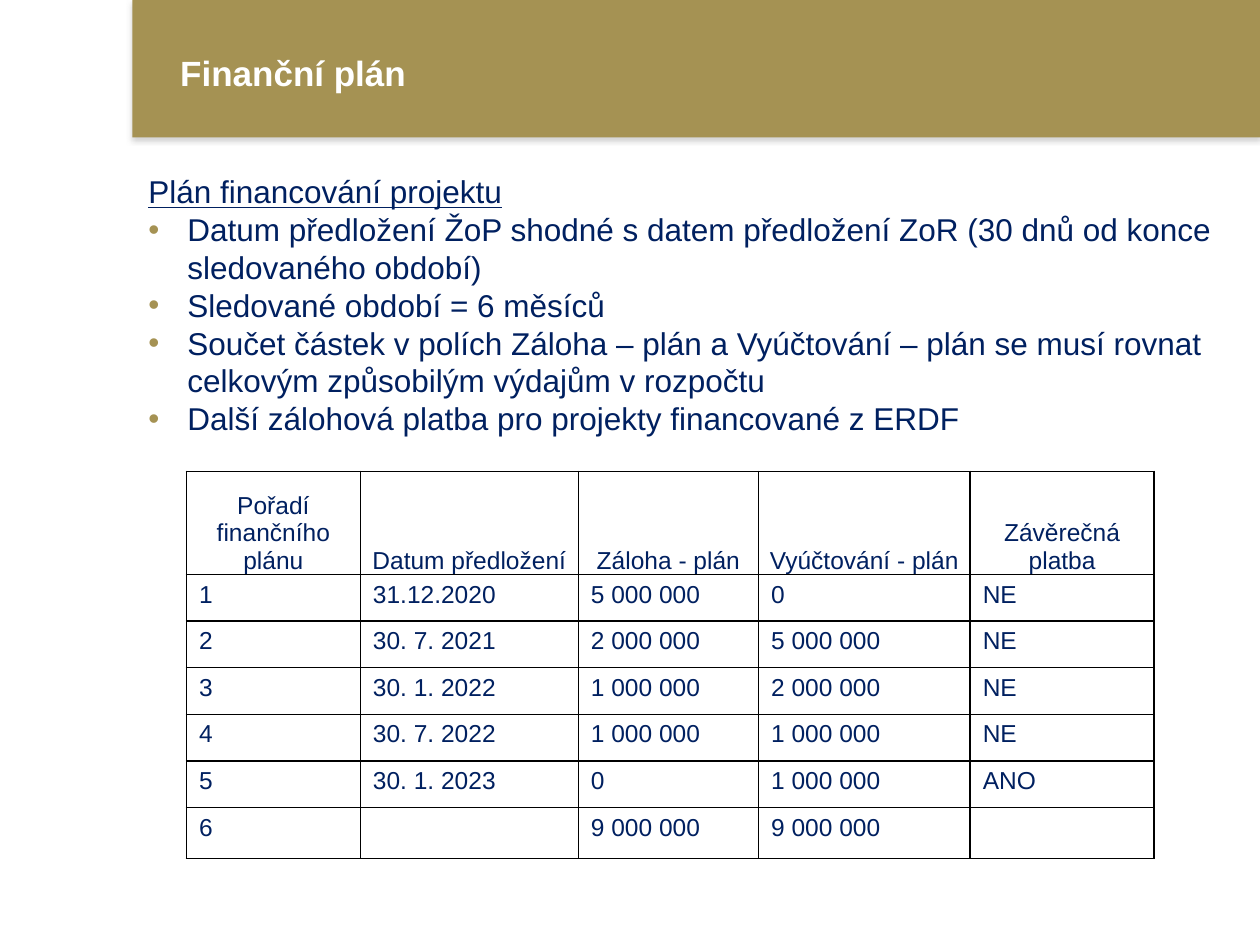
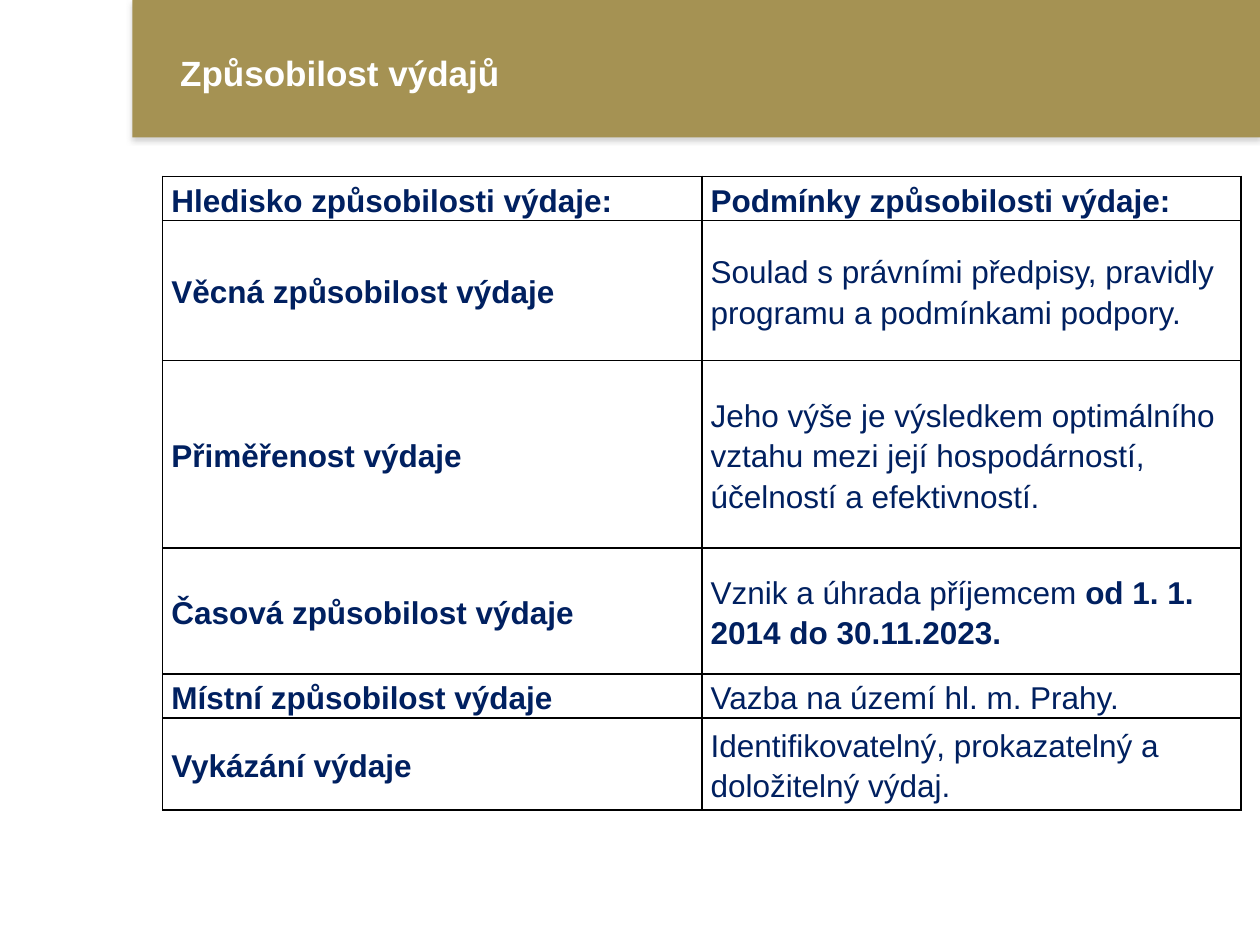
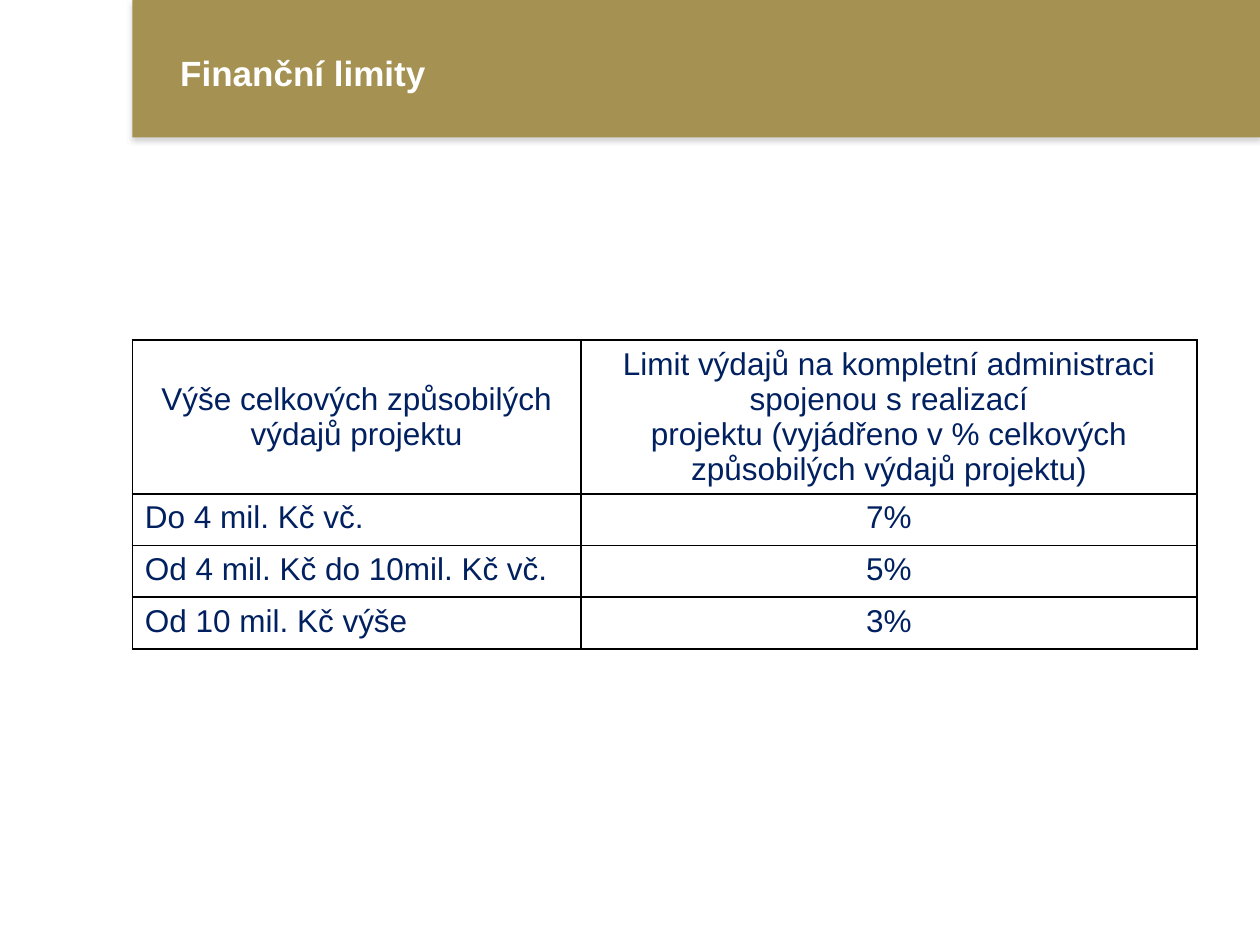
from dataclasses import dataclass
from typing import Any, NamedTuple

from lxml.etree import SubElement
from pptx import Presentation
from pptx.dml.color import RGBColor
from pptx.enum.shapes import MSO_SHAPE
from pptx.enum.text import MSO_ANCHOR, MSO_AUTO_SIZE, PP_ALIGN
from pptx.oxml.ns import qn
from pptx.util import Inches, Pt

RECT = MSO_SHAPE.RECTANGLE
TOP, MID, LOW = MSO_ANCHOR.TOP, MSO_ANCHOR.MIDDLE, MSO_ANCHOR.BOTTOM
LEFT, CENTER = PP_ALIGN.LEFT, PP_ALIGN.CENTER
FIXED = MSO_AUTO_SIZE.NONE
FONT = "Arial"
HUES = {"gold": "A59253", "navy": "002060", "white": "FFFFFF", "black": "000000", "gray": "808080"}
INDENT = Inches(0.31)


class Box(NamedTuple):
    left: float
    top: float
    width: float
    height: float


@dataclass(frozen=True)
class Look:
    size: int = 18
    bold: bool = False
    align: Any = LEFT
    anchor: Any = TOP
    side: float = 0.1
    edge: float = 0.05
    lines: float = 1.0


@dataclass(frozen=True)
class Cell:
    text: str
    look: Look
    tail: str = ""


@dataclass(frozen=True)
class Grid:
    left: float
    top: float
    cols: list[float]
    rows: list[float]
    cells: list[list[Cell]]


BAND = Box(1.05, 0, 8.95, 1.09)
TITLE = Box(1.33, 0.4, 8.17, 0.35)
BODY = Box(1.08, 1.32, 8.84, 3.13)

HEAD = "Plán financování projektu"
POINTS = [
    "Datum předložení ŽoP shodné s datem předložení ZoR (30 dnů od konce sledovaného období)",
    "Sledované období = 6 měsíců",
    "Součet částek v polích Záloha – plán a Vyúčtování – plán se musí rovnat celkovým způsobilým výdajům v rozpočtu",
    "Další zálohová platba pro projekty financované z ERDF",
]
PLAN = [
    ["Pořadí finančního plánu", "Datum předložení", "Záloha - plán", "Vyúčtování - plán", "Závěrečná platba"],
    ["1", "31.12.2020", "5 000 000", "0", "NE"],
    ["2", "30. 7. 2021", "2 000 000", "5 000 000", "NE"],
    ["3", "30. 1. 2022", "1 000 000", "2 000 000", "NE"],
    ["4", "30. 7. 2022", "1 000 000", "1 000 000", "NE"],
    ["5", "30. 1. 2023", "0", "1 000 000", "ANO"],
    ["6", "", "9 000 000", "9 000 000", ""],
]
TERMS = [
    ("Věcná způsobilost výdaje", "Soulad s právními předpisy, pravidly programu a podmínkami podpory.", ""),
    ("Přiměřenost výdaje",
     "Jeho výše je výsledkem optimálního vztahu mezi její hospodárností, účelností a efektivností.", ""),
    ("Časová způsobilost výdaje", "Vznik a úhrada příjemcem ", "od 1. 1. 2014 do 30.11.2023."),
    ("Místní způsobilost výdaje", "Vazba na území hl. m. Prahy.", ""),
    ("Vykázání výdaje", "Identifikovatelný, prokazatelný a doložitelný výdaj.", ""),
]
LIMITS = [("Do 4 mil. Kč vč.", "7%"), ("Od 4 mil. Kč do 10mil. Kč vč.", "5%"), ("Od 10 mil. Kč výše", "3%")]
LIMIT_HEADS = (
    "Výše celkových způsobilých\nvýdajů projektu",
    "Limit výdajů na kompletní administraci spojenou s realizací\n"
    "projektu (vyjádřeno v % celkových způsobilých výdajů projektu)",
)


def rgb(name: str) -> RGBColor:
    return RGBColor.from_string(HUES[name])


def put(item: Any, values: dict[str, Any]) -> None:
    for name, value in values.items():
        setattr(item, name, value)


def place(box: Box) -> list[int]:
    return [Inches(side) for side in box]


def tint(node: Any, name: str) -> Any:
    return SubElement(node, qn("a:srgbClr"), val=HUES[name])


def write(para: Any, text: str, size: int = 18, hue: str = "navy", bold: bool = False, line: bool = False) -> None:
    run = para.add_run()
    run.text = text
    put(run.font, {"name": FONT, "size": Pt(size), "bold": bold, "underline": line})
    run.font.color.rgb = rgb(hue)


def add_band(slide: Any) -> None:
    """Draw the title band and move it to the back of the shared layout."""
    band = slide.shapes.add_shape(RECT, *place(BAND))
    band.fill.solid()
    band.fill.fore_color.rgb = rgb("gold")
    band.line.fill.background()
    band.shadow.inherit = False
    effects = band.element.spPr.find(qn("a:effectLst"))
    shade = SubElement(effects, qn("a:outerShdw"), blurRad=str(Pt(3.1)), dist=str(Pt(1.8)),
                       dir="5400000", algn="t", rotWithShape="0")
    SubElement(tint(shade, "gray"), qn("a:alpha"), val="35000")
    slide.slide_layout.shapes.element.insert(2, band.element)


def add_title(slide: Any, text: str) -> None:
    title = slide.shapes.title
    put(title, dict(zip(("left", "top", "width", "height"), place(TITLE))))
    frame = title.text_frame
    put(frame, {"auto_size": FIXED, "word_wrap": True, "vertical_anchor": MID})
    para = frame.paragraphs[0]
    para.alignment = LEFT
    write(para, text, 20, "white", True)


def add_points(slide: Any) -> None:
    frame = slide.shapes.add_textbox(*place(BODY)).text_frame
    frame.word_wrap = True
    write(frame.paragraphs[0], HEAD, line=True)
    for text in POINTS:
        para = frame.add_paragraph()
        props = para._p.get_or_add_pPr()
        put_attrs = {"marL": INDENT, "indent": -INDENT}
        for name, value in put_attrs.items():
            props.set(name, str(value))
        tint(SubElement(props, qn("a:buClr")), "gold")
        SubElement(props, qn("a:buFont"), typeface=FONT)
        SubElement(props, qn("a:buChar"), char="•")
        write(para, text)


def fill_cell(spot: Any, cell: Cell) -> None:
    look = cell.look
    side, edge = Inches(look.side), Inches(look.edge)
    put(spot, {"margin_left": side, "margin_right": side, "margin_top": edge,
               "margin_bottom": edge, "vertical_anchor": look.anchor})
    props = spot._tc.get_or_add_tcPr()
    for name in ("lnL", "lnR", "lnT", "lnB"):
        line = SubElement(props, qn(f"a:{name}"), w=str(Pt(1)))
        tint(SubElement(line, qn("a:solidFill")), "black")
    spot.fill.background()
    frame = spot.text_frame
    for row, text in enumerate(cell.text.split("\n")):
        para = frame.add_paragraph() if row else frame.paragraphs[0]
        put(para, {"alignment": look.align, "line_spacing": look.lines})
        if text:
            write(para, text, look.size, bold=look.bold)
    if cell.tail:
        write(para, cell.tail, look.size, bold=True)


def add_grid(slide: Any, grid: Grid) -> None:
    box = Box(grid.left, grid.top, sum(grid.cols), sum(grid.rows))
    table = slide.shapes.add_table(len(grid.rows), len(grid.cols), *place(box)).table
    put(table, {"first_row": False, "horz_banding": False})
    for col, width in zip(table.columns, grid.cols):
        col.width = Inches(width)
    for row, height, cells in zip(table.rows, grid.rows, grid.cells):
        row.height = Inches(height)
        for spot, cell in zip(row.cells, cells):
            fill_cell(spot, cell)


def plan_grid() -> Grid:
    top = Look(14, align=CENTER, anchor=LOW, side=0, edge=0)
    cells = [[Cell(text, Look(14) if row else top) for text in texts] for row, texts in enumerate(PLAN)]
    return Grid(1.48, 3.74, [1.38, 1.73, 1.43, 1.68, 1.46], [0.82] + [0.37] * 6, cells)


def terms_grid() -> Grid:
    plain = Look(anchor=MID, side=0.07, edge=0, lines=1.15)
    bold = Look(bold=True, anchor=MID, side=0.07, edge=0, lines=1.15)
    cells = [[Cell("Hledisko způsobilosti výdaje:", bold), Cell("Podmínky způsobilosti výdaje:", bold)]]
    cells += [[Cell(term, bold), Cell(text, plain, tail)] for term, text, tail in TERMS]
    return Grid(1.29, 1.4, [4.28] * 2, [0.35, 1.11, 1.49, 1, 0.35, 0.73], cells)


def limits_grid() -> Grid:
    cells = [[Cell(text, Look(align=CENTER, anchor=MID)) for text in LIMIT_HEADS]]
    cells += [[Cell(span, Look()), Cell(share, Look(align=CENTER))] for span, share in LIMITS]
    return Grid(1.05, 2.7, [3.56, 4.89], [1.21] + [0.41] * 3, cells)


def main() -> None:
    deck = Presentation()
    put(deck, {"slide_width": Inches(10), "slide_height": Inches(7.5)})
    pages = {"Finanční plán": plan_grid(), "Způsobilost výdajů": terms_grid(), "Finanční limity": limits_grid()}
    slides = []
    for title, grid in pages.items():
        slide = deck.slides.add_slide(deck.slide_layouts[5])
        add_title(slide, title)
        add_grid(slide, grid)
        slides.append(slide)
    add_band(slides[0])
    add_points(slides[0])
    deck.save("out.pptx")


if __name__ == "__main__":
    main()
